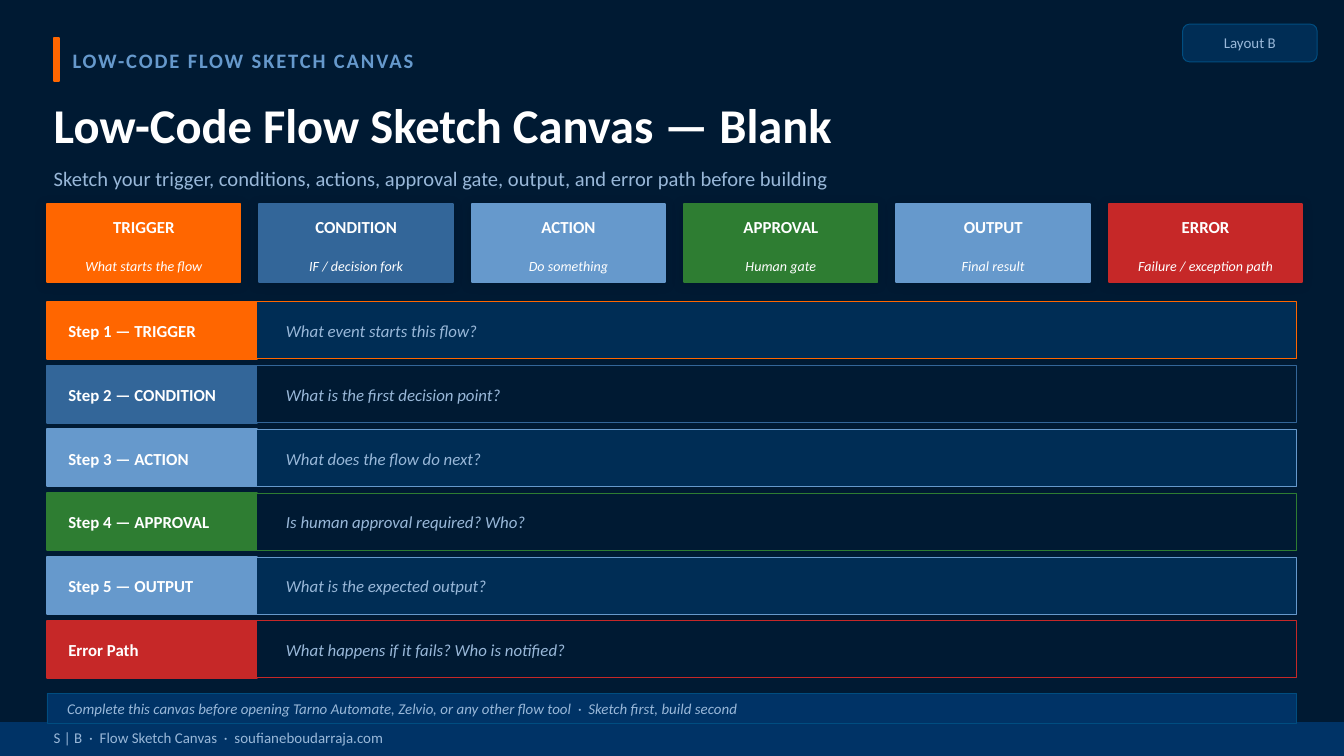
from lxml import etree
from pptx import Presentation
from pptx.dml.color import RGBColor
from pptx.enum import shapes, text
from pptx.oxml import ns
from pptx.util import Inches, Pt

NAVY, PANEL, BAND, EDGE = "001A33", "002D55", "003366", "004D80"
ORANGE, STEEL, SKY, GREEN, RED = "FF6600", "336699", "6699CC", "2E7D32", "C62828"
PALE, WHITE = "99B8D9", "FFFFFF"

HEADINGS = [
    ((0.54, 0.27, 7, 0.35), "LOW-CODE FLOW SKETCH CANVAS", 11, SKY, dict(bold=True, spacing=1)),
    ((0.4, 0.65, 9.2, 0.55), "Low-Code Flow Sketch Canvas — Blank", 26, WHITE, dict(bold=True)),
    ((0.4, 1.18, 9.2, 0.3),
     "Sketch your trigger, conditions, actions, approval gate, output, and error path before building",
     11, PALE, {}),
]
TAG = "Layout B"
FOOTER = "S | B  ·  Flow Sketch Canvas  ·  soufianeboudarraja.com"
TIP = ("Complete this canvas before opening Tarno Automate, Zelvio, or any other flow tool"
       "  ·  Sketch first, build second")

STAGES = [
    ("TRIGGER", "What starts the flow", ORANGE, "Step 1 — TRIGGER", "What event starts this flow?"),
    ("CONDITION", "IF / decision fork", STEEL, "Step 2 — CONDITION", "What is the first decision point?"),
    ("ACTION", "Do something", SKY, "Step 3 — ACTION", "What does the flow do next?"),
    ("APPROVAL", "Human gate", GREEN, "Step 4 — APPROVAL", "Is human approval required? Who?"),
    ("OUTPUT", "Final result", SKY, "Step 5 — OUTPUT", "What is the expected output?"),
    ("ERROR", "Failure / exception path", RED, "Error Path", "What happens if it fails? Who is notified?"),
]

LEFT = 0.35
CARD_TOP, CARD_WIDTH, CARD_HEIGHT, CARD_PITCH = 1.52, 1.44, 0.58, 1.58
ROW_LAST, ROW_PITCH, ROW_GAP = 4.62, 0.95 / 2, 0.05
ROW_TOP = ROW_LAST - ROW_PITCH * (len(STAGES) - 1)
ROW_HEIGHT = ROW_PITCH - ROW_GAP
LABEL_WIDTH, ANSWER_WIDTH = 1.56, 7.74

presentation = Presentation()
presentation.slide_width = Inches(10)
presentation.slide_height = Inches(10 * 9 / 16)
slide = presentation.slides.add_slide(presentation.slide_layouts[6])


def color(value):
    return RGBColor.from_string(value)


def place(box):
    return [Inches(length) for length in box]


def add_box(box, fill, line, width=1, kind=shapes.MSO_SHAPE.RECTANGLE):
    shape = slide.shapes.add_shape(kind, *place(box))
    shape.shadow.inherit = False
    shape.fill.solid()
    shape.fill.fore_color.rgb = color(fill)
    shape.line.color.rgb = color(line)
    shape.line.width = Pt(width)
    return shape


def add_shadow(shape):
    effects = shape._element.spPr.find(ns.qn("a:effectLst"))
    shadow = etree.SubElement(effects, ns.qn("a:outerShdw"), blurRad=str(Pt(6)), dist=str(Pt(1)),
                              dir=str(135 * 60000), algn="bl", rotWithShape="0")
    black = etree.SubElement(shadow, ns.qn("a:srgbClr"), val="000000")
    etree.SubElement(black, ns.qn("a:alpha"), val="12000")


def add_text(box, words, size, ink, bold=False, italic=False, centered=False, inset=False, spacing=0):
    frame = slide.shapes.add_textbox(*place(box)).text_frame
    frame.word_wrap = True
    frame.vertical_anchor = text.MSO_ANCHOR.MIDDLE
    if not inset:
        frame.margin_left = frame.margin_right = frame.margin_top = frame.margin_bottom = 0
    paragraph = frame.paragraphs[0]
    paragraph.alignment = text.PP_ALIGN.CENTER if centered else text.PP_ALIGN.LEFT
    run = paragraph.add_run()
    run.text = words
    run.font.name = "Calibri"
    run.font.size = Pt(size)
    run.font.bold = bold
    run.font.italic = italic
    run.font.color.rgb = color(ink)
    if spacing:
        run._r.get_or_add_rPr().set("spc", str(spacing * 100))


def add_card(index, name, hint, accent):
    left = LEFT + index * CARD_PITCH
    add_shadow(add_box((left, CARD_TOP, CARD_WIDTH, CARD_HEIGHT), accent, accent))
    add_text((left, CARD_TOP, CARD_WIDTH, 0.34), name, 9, WHITE, bold=True, centered=True, inset=True)
    add_text((left, CARD_TOP + 0.36, CARD_WIDTH, 0.2), hint, 7.5, WHITE, italic=True, centered=True)


def add_row(index, label, question, accent):
    top = ROW_TOP + index * ROW_PITCH
    answer_left = LEFT + LABEL_WIDTH
    add_box((LEFT, top, LABEL_WIDTH, ROW_HEIGHT), accent, accent)
    add_text((LEFT + 0.06, top + 0.04, 1.44, 0.35), label, 9, WHITE, bold=True, inset=True)
    add_box((answer_left, top, ANSWER_WIDTH, ROW_HEIGHT), NAVY if index % 2 else PANEL, accent, 0.5)
    add_text((answer_left + 0.12, top + 0.04, 7.54, 0.35), question, 9, PALE, italic=True, inset=True)


slide.background.fill.solid()
slide.background.fill.fore_color.rgb = color(NAVY)

add_box((0.4, 0.28, 0.04, 0.32), ORANGE, ORANGE)
for box, words, size, ink, style in HEADINGS:
    add_text(box, words, size, ink, **style)

tag_box = (8.8, 0.18, 1, 0.28)
tag = add_box(tag_box, PANEL, EDGE, 0.5, shapes.MSO_SHAPE.ROUNDED_RECTANGLE)
tag.adjustments[0] = 0.18
add_text(tag_box, TAG, 8, PALE, centered=True)

add_box((0, 5.38, 10, 0.24), BAND, BAND)
add_text((0.4, 5.39, 9.2, 0.2), FOOTER, 8, PALE)

for index, (name, hint, accent, _, _) in enumerate(STAGES):
    add_card(index, name, hint, accent)
for index, (_, _, accent, label, question) in enumerate(STAGES):
    add_row(index, label, question, accent)

add_box((LEFT, 5.16, LABEL_WIDTH + ANSWER_WIDTH, 0.22), BAND, EDGE, 0.5)
add_text((0.5, 5.18, 9, 0.18), TIP, 8, PALE, italic=True)

presentation.save("out.pptx")
